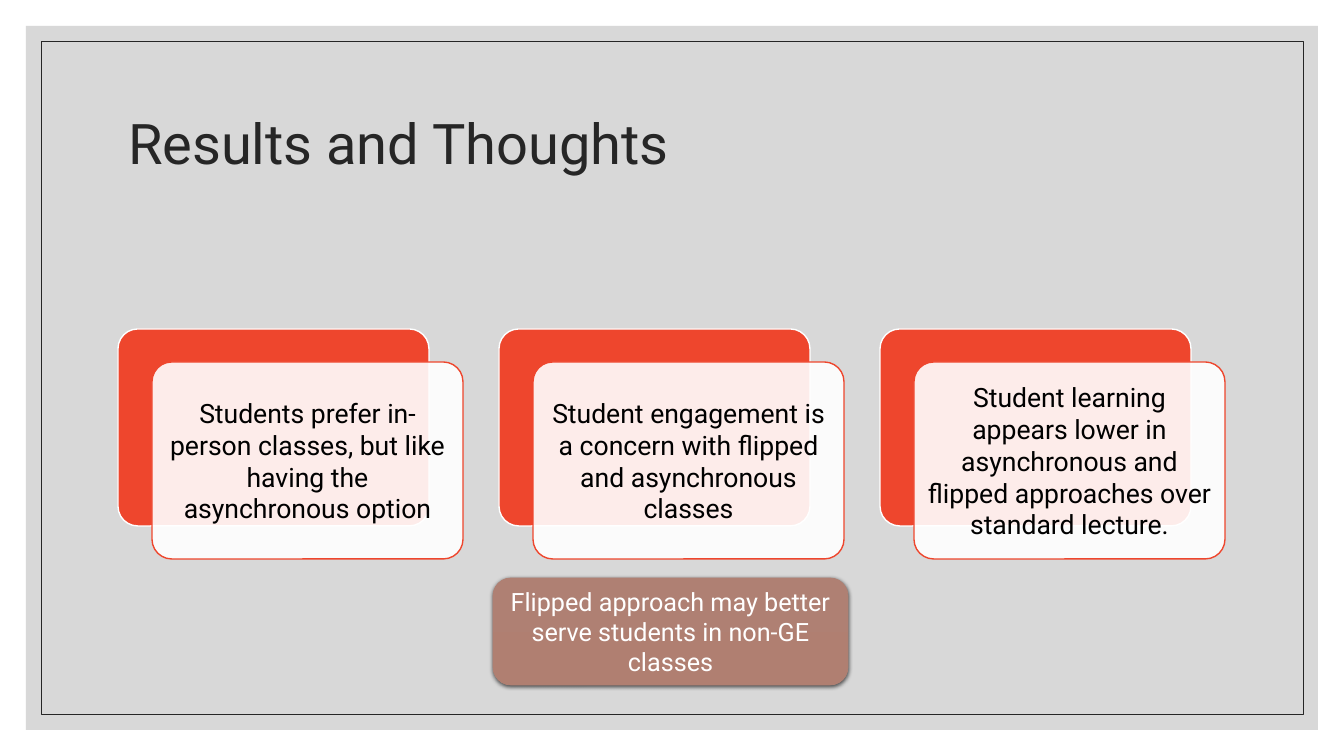
"""Build the Results and Thoughts slide with three layered cards and a closing note."""
from copy import deepcopy

from lxml.etree import SubElement
from pptx import Presentation
from pptx.dml.color import RGBColor
from pptx.enum.shapes import MSO_SHAPE as Shape
from pptx.enum.text import MSO_ANCHOR as Anchor, PP_ALIGN as Align
from pptx.oxml.ns import qn
from pptx.util import Pt

PX = 914400 / 100.8
COLORS = {
    "panel": "BFBFBF", "ink": "262626", "red": "EE462D", "white": "FFFFFF",
    "black": "000000", "note": "AF8073", "note_mid": "B07F71", "note_end": "AF7E71",
}
FINDINGS = [
    "Students prefer in-person classes, but like having the asynchronous option",
    "Student engagement is a concern with flipped and asynchronous classes",
    "Student learning appears lower in asynchronous and flipped approaches over standard lecture.",
]
CARD_LEFT, CARD_TOP, CARD_WIDTH, CARD_HEIGHT = 118, 329, 311, 197
CARD_STEP, FRONT_SHIFT_X, FRONT_SHIFT_Y = 381, 34, 33


def add_box(kind, box, fill=None, line=None, weight=1, opacity=100):
    shape = slide.shapes.add_shape(kind, *[int(length * PX) for length in box])
    shape.shadow.inherit = False
    if fill:
        shape.fill.solid()
        shape.fill.fore_color.rgb = RGBColor.from_string(COLORS[fill])
        if opacity < 100:
            color = shape.element.spPr.find(qn("a:solidFill"))[0]
            SubElement(color, qn("a:alpha"), val=str(opacity * 1000))
    else:
        shape.fill.background()
    if line:
        shape.line.color.rgb = RGBColor.from_string(COLORS[line])
        shape.line.width = Pt(weight)
    else:
        shape.line.fill.background()
    return shape


def write_text(shape, text, size, color, align=Align.CENTER):
    frame = shape.text_frame
    frame.text = text
    frame.word_wrap = True
    frame.vertical_anchor = Anchor.MIDDLE
    paragraph = frame.paragraphs[0]
    paragraph.alignment = align
    font = paragraph.runs[0].font
    font.name = "Roboto"
    font.size = Pt(size)
    font.color.rgb = RGBColor.from_string(COLORS[color])


presentation = Presentation()
presentation.slide_width = int(1344 * PX)
presentation.slide_height = int(756 * PX)
slide = presentation.slides.add_slide(presentation.slide_layouts[5])

panel = add_box(Shape.RECTANGLE, (26, 26, 1292, 704), "panel", opacity=60)
border = add_box(Shape.RECTANGLE, (41, 41, 1262, 673), line="ink", weight=0.5)

title = slide.shapes.title
title.left, title.top, title.width, title.height = [
    int(length * PX) for length in (118, 71, 1109, 151)
]
write_text(title, "Results and Thoughts", 40, "ink", Align.LEFT)
title.text_frame.paragraphs[0].line_spacing = 0.9
border.element.addnext(title.element)

for index, finding in enumerate(FINDINGS):
    left = CARD_LEFT + index * CARD_STEP
    back = add_box(Shape.ROUNDED_RECTANGLE, (left, CARD_TOP, CARD_WIDTH, CARD_HEIGHT),
                   "red", "white")
    front = add_box(Shape.ROUNDED_RECTANGLE,
                    (left + FRONT_SHIFT_X, CARD_TOP + FRONT_SHIFT_Y, CARD_WIDTH, CARD_HEIGHT),
                    "white", "red", opacity=90)
    back.adjustments[0] = front.adjustments[0] = 0.1
    write_text(front, finding, 19, "black")
    frame = front.text_frame
    frame.margin_left = frame.margin_right = int(8 * PX)
    frame.margin_top = frame.margin_bottom = int(8 * PX)

note = add_box(Shape.ROUNDED_RECTANGLE, (493, 578, 355, 107), line="note", weight=0.5)
note.fill.gradient()
note.fill.gradient_angle = 270
stop_list = note.element.spPr.find(qn("a:gradFill")).find(qn("a:gsLst"))
stop_list.insert(1, deepcopy(stop_list[0]))
for stop, position, name in zip(note.fill.gradient_stops, (0, 0.5, 1),
                                ("note", "note_mid", "note_end")):
    stop.position = position
    stop.color.rgb = RGBColor.from_string(COLORS[name])
effects = note.element.spPr.find(qn("a:effectLst"))
shadow = SubElement(effects, qn("a:outerShdw"), blurRad=str(Pt(3)), dist=str(Pt(1)),
                    dir="5400000", algn="ctr", rotWithShape="0")
shadow_color = SubElement(shadow, qn("a:srgbClr"), val=COLORS["black"])
SubElement(shadow_color, qn("a:alpha"), val="63000")
write_text(note, "Flipped approach may better serve students in non-GE classes", 18, "white")

presentation.save("out.pptx")
